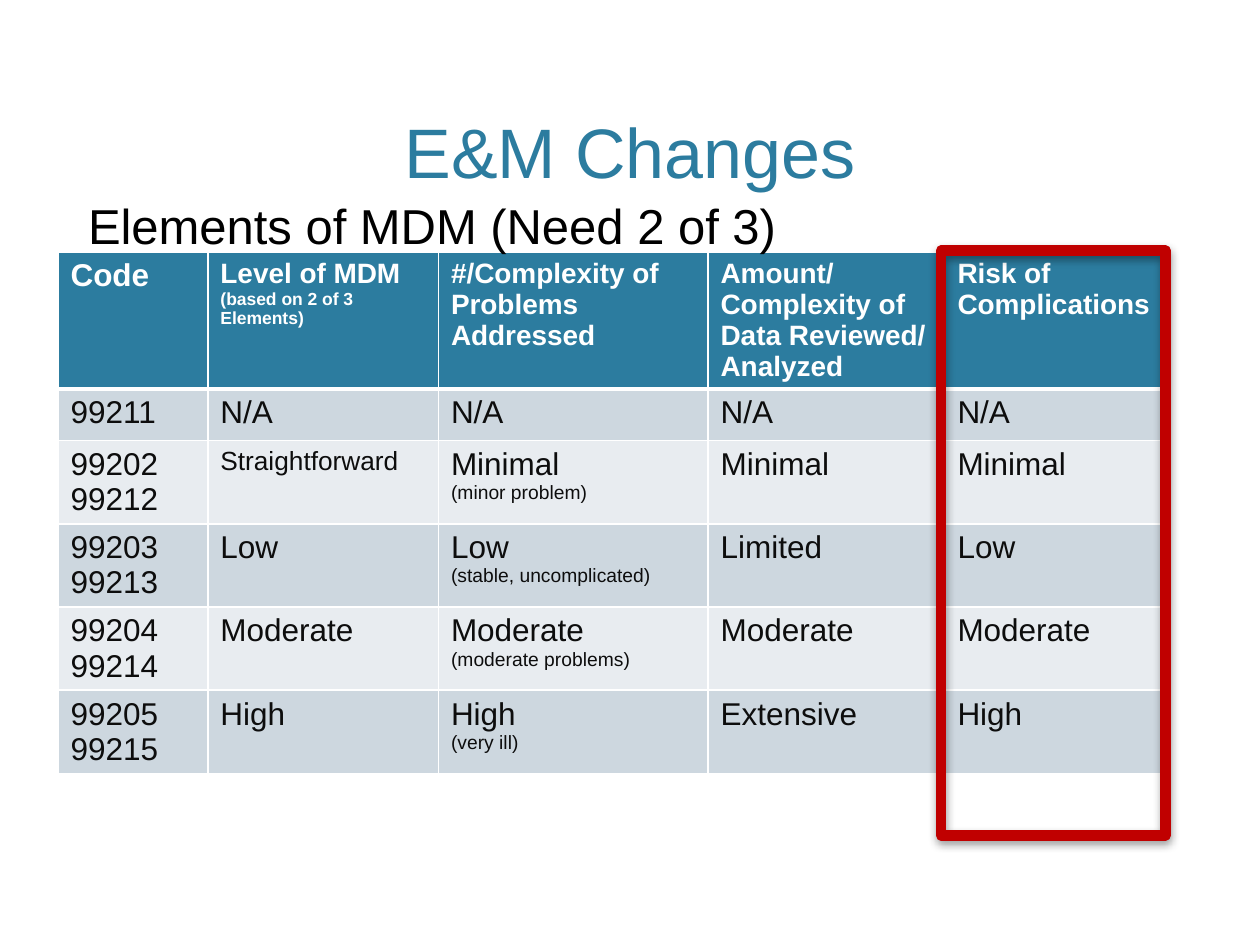
from dataclasses import dataclass

from lxml.etree import SubElement
from pptx import Presentation
from pptx.dml.color import RGBColor
from pptx.enum.shapes import MSO_SHAPE
from pptx.enum.text import MSO_ANCHOR, PP_ALIGN
from pptx.oxml import parse_xml
from pptx.oxml.ns import nsdecls, qn
from pptx.util import Pt


@dataclass(frozen=True)
class Theme:
    """Colours, font and type sizes of the slide."""
    font: str = "Arial"
    teal: str = "2C7C9F"
    white: str = "FFFFFF"
    black: str = "000000"
    ink: str = "0D0D0D"
    red: str = "C00000"
    bands: tuple = ("CDD7DF", "E8ECF0")
    title: int = 40
    subtitle: int = 28
    body: int = 18
    heading: int = 16
    compact: int = 15
    note: int = 11
    small: int = 10


THEME = Theme()
COLUMN_WIDTHS = (85.68, 131.76, 154.08, 135.36, 126.72)
ROW_HEIGHT = 29.5
HEADERS = (
    [("Code", THEME.body)],
    [("Level of MDM", THEME.heading), ("(based on 2 of 3 Elements)", THEME.small)],
    [("#/Complexity of Problems Addressed", THEME.heading)],
    [(line, THEME.heading) for line in ("Amount/", "Complexity of Data Reviewed/", "Analyzed")],
    [("Risk of Complications", THEME.heading)],
)
LEVELS = (
    (("99211",), "N/A", "N/A", None, "N/A", "N/A"),
    (("99202", "99212"), "Straightforward", "Minimal", "(minor problem)", "Minimal", "Minimal"),
    (("99203", "99213"), "Low", "Low", "(stable, uncomplicated)", "Limited", "Low"),
    (("99204", "99214"), "Moderate", "Moderate", "(moderate problems)", "Moderate", "Moderate"),
    (("99205", "99215"), "High", "High", "(very ill)", "Extensive", "High"),
)


def place(shape, box):
    """Move and size a shape to a box given in points."""
    for name, value in zip(("left", "top", "width", "height"), box):
        setattr(shape, name, Pt(value))


def write_lines(text_frame, lines, color, bold=False, alignment=None):
    """Write (text, size) pairs as paragraphs."""
    for index, (text, size) in enumerate(lines):
        paragraph = text_frame.paragraphs[0] if index == 0 else text_frame.add_paragraph()
        paragraph.alignment = alignment
        run = paragraph.add_run()
        run.text = text
        for name, value in {"name": THEME.font, "size": Pt(size), "bold": bold}.items():
            setattr(run.font, name, value)
        run.font.color.rgb = RGBColor.from_string(color)


def add_title(slide, box):
    """Format the title placeholder."""
    place(slide.shapes.title, box)
    text_frame = slide.shapes.title.text_frame
    text_frame.vertical_anchor = MSO_ANCHOR.BOTTOM
    write_lines(text_frame, [("E&M Changes", THEME.title)], THEME.teal, alignment=PP_ALIGN.CENTER)


def add_subtitle(slide, box):
    """Add the line that introduces the table."""
    text_frame = slide.shapes.add_textbox(*map(Pt, box)).text_frame
    text_frame.word_wrap = True
    write_lines(text_frame, [("Elements of MDM (Need 2 of 3)", THEME.subtitle)], THEME.black)


def set_borders(cell, **widths):
    """Draw white cell borders with widths in points."""
    properties = cell._tc.get_or_add_tcPr()
    for side in "LRTB":
        line = SubElement(properties, qn(f"a:ln{side}"), w=str(Pt(widths.get(side, 1))))
        fill = SubElement(line, qn("a:solidFill"))
        SubElement(fill, qn("a:srgbClr"), val=THEME.white)


def fill_cell(cell, lines, fill, color, bold, borders):
    """Write and colour one table cell."""
    write_lines(cell.text_frame, lines, color, bold)
    set_borders(cell, **borders)
    cell.fill.solid()
    cell.fill.fore_color.rgb = RGBColor.from_string(fill)


def level_lines(codes, level, problems, note, amount, risk):
    """Return the lines of each cell in one level row."""
    level_size = THEME.compact if level == "Straightforward" else THEME.body
    problem_lines = [(problems, THEME.body)] + ([(note, THEME.note)] if note else [])
    return (
        [(code, THEME.body) for code in codes],
        [(level, level_size)],
        problem_lines,
        [(amount, THEME.body)],
        [(risk, THEME.body)],
    )


def add_mdm_table(slide, box):
    """Add the table of codes and decision-making elements."""
    rows = [HEADERS] + [level_lines(*level) for level in LEVELS]
    frame = slide.shapes.add_table(len(rows), len(COLUMN_WIDTHS), *map(Pt, box))
    table = frame.table
    for column, width in zip(table.columns, COLUMN_WIDTHS):
        column.width = Pt(width)
    for row_index, row in enumerate(rows):
        table.rows[row_index].height = Pt(ROW_HEIGHT)
        header = row_index == 0
        fill = THEME.teal if header else THEME.bands[(row_index - 1) % 2]
        color = THEME.white if header else THEME.ink
        borders = {0: {"B": 3}, 1: {"T": 3}}.get(row_index, {})
        for column_index, lines in enumerate(row):
            fill_cell(table.cell(row_index, column_index), lines, fill, color, header, borders)
    place(frame, box)


def add_risk_frame(slide, box):
    """Outline the risk column with a red, shadowed frame."""
    shape = slide.shapes.add_shape(MSO_SHAPE.RECTANGLE, *map(Pt, box))
    shape.fill.background()
    shape.line.color.rgb = RGBColor.from_string(THEME.red)
    shape.line.width = Pt(6)
    SubElement(shape.line._get_or_add_ln(), qn("a:round"))
    shape._element.spPr.append(parse_xml(
        f'<a:effectLst {nsdecls("a")}><a:outerShdw blurRad="{Pt(5)}" dist="{Pt(2)}" '
        f'dir="5400000" rotWithShape="0"><a:srgbClr val="{THEME.black}">'
        '<a:alpha val="40000"/></a:srgbClr></a:outerShdw></a:effectLst>'))


def main():
    """Build and save the slide."""
    presentation = Presentation()
    presentation.slide_width, presentation.slide_height = Pt(720), Pt(540)
    slide = presentation.slides.add_slide(presentation.slide_layouts[5])
    add_title(slide, (43.2, 8.64, 633.6, 105.12))
    add_mdm_table(slide, (33.12, 144, 633.6, 314.64))
    add_subtitle(slide, (43.2, 108, 591.84, 41.04))
    add_risk_frame(slide, (537.84, 143.28, 128.16, 334.08))
    presentation.save("out.pptx")


if __name__ == "__main__":
    main()
